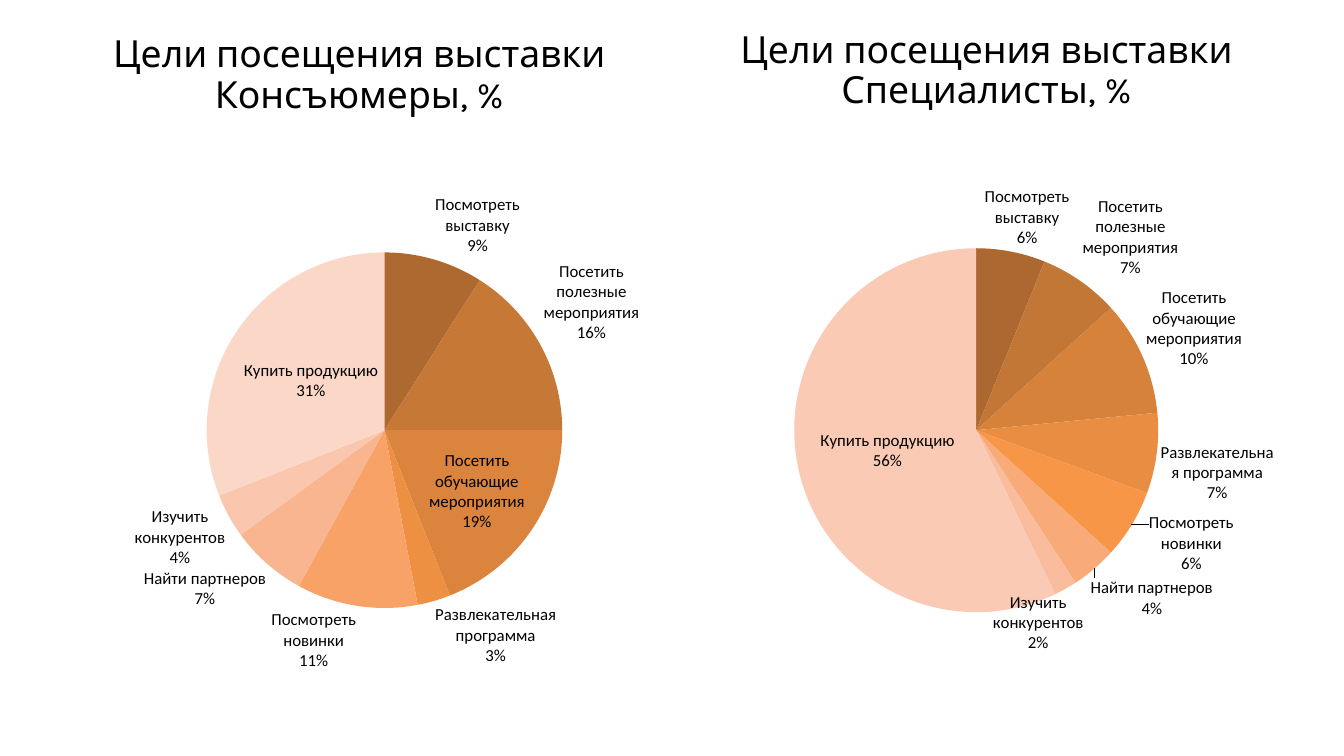
from copy import deepcopy

from pptx import Presentation
from pptx.chart.data import CategoryChartData
from pptx.dml.color import RGBColor
from pptx.enum.chart import XL_CHART_TYPE, XL_LABEL_POSITION
from pptx.enum.text import MSO_ANCHOR, PP_ALIGN
from pptx.oxml import parse_xml
from pptx.oxml.ns import nsdecls, qn
from pptx.util import Pt

COLORS = {
    "text": "000000",
    "visitors": "AD6930 C67936 DB843D EE9041 F8A268 F9B590 FAC7AE FBD7C8",
    "experts": "AC6830 C27737 D6823B E88D41 F79646 F8AA79 F9BC9C FACAB5",
}
GOALS = [
    "Посмотреть выставку", "Посетить полезные мероприятия",
    "Посетить обучающие мероприятия", "Развлекательная программа",
    "Посмотреть новинки", "Найти партнеров", "Изучить конкурентов",
    "Купить продукцию",
]
TITLE = {"name": "Karla", "size": Pt(40)}
LABEL = {"name": "Calibri", "size": Pt(18)}
# Title box, chart box, pie centre and radius are in points.
GROUPS = [
    {"title": "Консъюмеры, %", "tint": "visitors",
     "values": [9, 16, 19, 3, 11, 7, 4, 31],
     "head": (36, 38, 698, 97), "box": (48, 195, 707, 534),
     "pie": (364, 266, 190.5)},
    {"title": "Специалисты, %", "tint": "experts",
     "values": [6, 7, 10, 7, 6, 4, 2, 56],
     "head": (708, 33, 698, 97), "box": (684, 189, 707, 534),
     "pie": (362, 272, 195)},
]


def style(font, form):
    for key, value in form.items():
        setattr(font, key, value)
    font.color.rgb = RGBColor.from_string(COLORS["text"])


def node(tag, value):
    return parse_xml(f'<c:{tag} {nsdecls("c")} val="{value}"/>')


def add_title(slide, box, name):
    frame = slide.shapes.add_textbox(*map(Pt, box)).text_frame
    form = {"word_wrap": True, "vertical_anchor": MSO_ANCHOR.TOP,
            "margin_left": 0, "margin_right": 0,
            "margin_top": 0, "margin_bottom": 0}
    for key, value in form.items():
        setattr(frame, key, value)
    line = frame.paragraphs[0]
    line.text = "Цели посещения выставки\v" + name
    line.alignment = PP_ALIGN.CENTER
    line.line_spacing = 0.9
    for run in line.runs:
        style(run.font, TITLE)


def place_pie(chart, box, pie):
    """Fix the circle's place inside the chart box."""
    wide, high = box[2:]
    mid_x, mid_y, radius = pie
    parts = {"x": (mid_x - radius) / wide, "y": (mid_y - radius) / high,
             "w": 2 * radius / wide, "h": 2 * radius / high}
    plan = parse_xml(f'<c:layout {nsdecls("c")}><c:manualLayout/></c:layout>')
    plan[0].append(node("layoutTarget", "inner"))
    for key in "xy":
        plan[0].append(node(key + "Mode", "edge"))
    for key, value in parts.items():
        plan[0].append(node(key, round(value, 4)))
    area = chart.element.find(".//" + qn("c:plotArea")) if hasattr(
        chart, "element") else chart._chartSpace.find(".//" + qn("c:plotArea"))
    old = area.find(qn("c:layout"))
    if old is not None:
        area.remove(old)
    area.insert(0, plan)


def add_labels(series):
    """Label each slice, with the last label in the middle of its slice."""
    labels = series.data_labels
    form = {"show_category_name": True, "show_value": True,
            "show_percentage": False, "number_format": '0"%"',
            "number_format_is_linked": False,
            "position": XL_LABEL_POSITION.BEST_FIT}
    for key, value in form.items():
        setattr(labels, key, value)
    style(labels.font, LABEL)
    root = labels._element
    gap = parse_xml(f'<c:separator {nsdecls("c")}>\n</c:separator>')
    root.find(qn("c:showBubbleSize")).addnext(gap)
    last = parse_xml(f'<c:dLbl {nsdecls("c")}/>')
    last.append(node("idx", len(GOALS) - 1))
    for part in root:
        if part.tag != qn("c:showLeaderLines"):
            last.append(deepcopy(part))
    last.find(qn("c:dLblPos")).set("val", "ctr")
    root.insert(0, last)


def add_pie(slide, group):
    data = CategoryChartData()
    data.categories = GOALS
    data.add_series("Цели посещения", group["values"])
    box = group["box"]
    chart = slide.shapes.add_chart(
        XL_CHART_TYPE.PIE, *map(Pt, box), data).chart
    chart.has_legend = False
    chart.has_title = False
    style(chart.font, LABEL)
    plot = chart.plots[0]
    plot.vary_by_categories = True
    series = plot.series[0]
    for num, tint in enumerate(COLORS[group["tint"]].split()):
        form = series.points[num].format
        form.fill.solid()
        form.fill.fore_color.rgb = RGBColor.from_string(tint)
        form.line.fill.background()
    add_labels(series)
    place_pie(chart, box, group["pie"])


def main():
    deck = Presentation()
    deck.slide_width, deck.slide_height = Pt(1440), Pt(810)
    slide = deck.slides.add_slide(deck.slide_layouts[6])
    for group in GROUPS:
        add_title(slide, group["head"], group["title"])
        add_pie(slide, group)
    deck.save("out.pptx")


if __name__ == "__main__":
    main()
